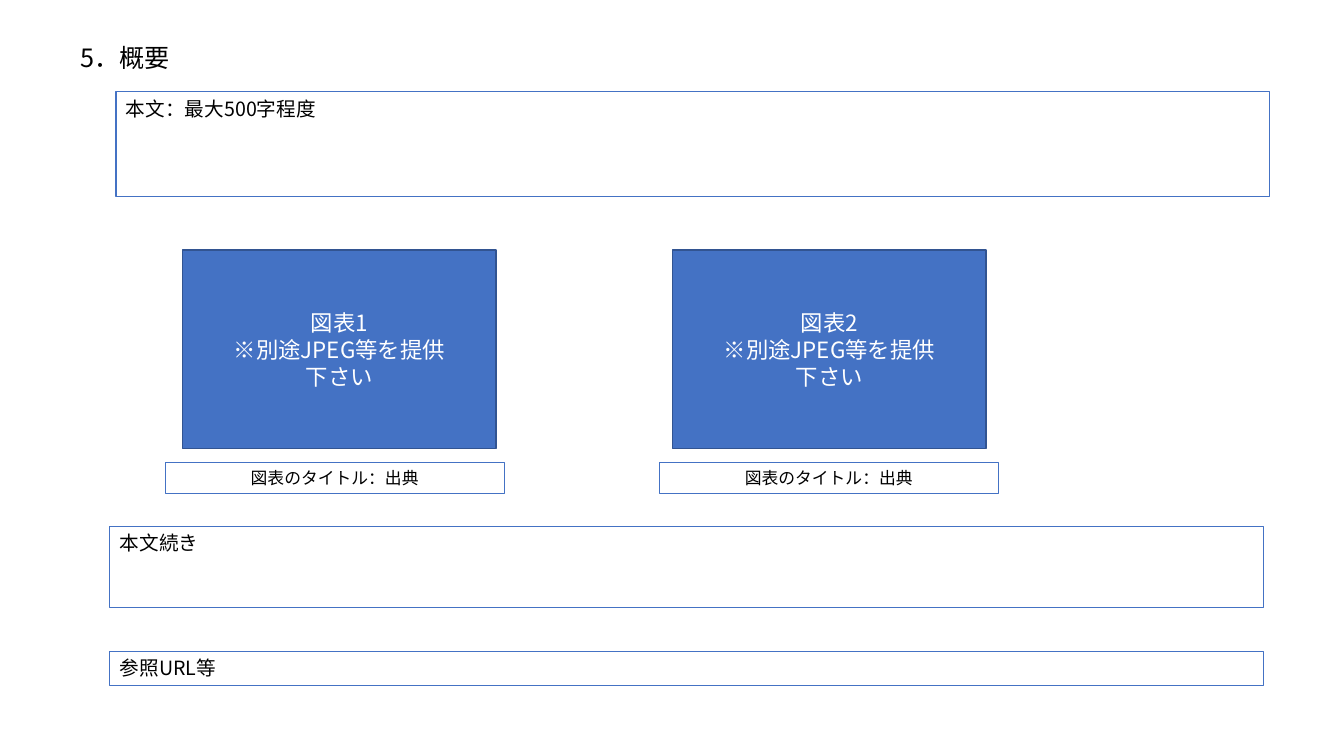
from lxml import etree
from pptx import Presentation
from pptx import util as u
from pptx.dml.color import RGBColor
from pptx.enum import shapes, text
from pptx.oxml.ns import qn

FONT = "Noto Sans CJK JP"
BLACK = RGBColor(0x00, 0x00, 0x00)
WHITE = RGBColor(0xFF, 0xFF, 0xFF)
BLUE = RGBColor(0x44, 0x72, 0xC4)
DARK_BLUE = RGBColor(0x32, 0x54, 0x91)

SLIDE_WIDTH = u.Inches(13.33)
SLIDE_HEIGHT = u.Inches(7.5)

# Lengths are percentages of the slide's width and height.
BODY_WIDTH = 85.82
FIGURE_LEFT, FIGURE_PITCH = 13.58, 36.46
CAPTION_LEFT, CAPTION_PITCH = 12.3, 36.76


def place(left, top, width, height):
    """Turn percentages of the slide into lengths."""
    return (int(SLIDE_WIDTH * left / 100), int(SLIDE_HEIGHT * top / 100),
            int(SLIDE_WIDTH * width / 100), int(SLIDE_HEIGHT * height / 100))


def write(shape, lines, size, color=BLACK, align=text.PP_ALIGN.LEFT,
          anchor=text.MSO_ANCHOR.TOP):
    frame = shape.text_frame
    frame.word_wrap = True
    frame.vertical_anchor = anchor
    frame.text = "\n".join(lines)
    for paragraph in frame.paragraphs:
        paragraph.alignment = align
        font = paragraph.font
        font.size = u.Pt(size)
        font.name = FONT
        font.color.rgb = color
        properties = paragraph._p.pPr.find(qn("a:defRPr"))
        east_asian = etree.SubElement(properties, qn("a:ea"))
        east_asian.set("typeface", FONT)


def add_title(slide, title, box):
    write(slide.shapes.add_textbox(*place(*box)), [title], 18)


def add_rectangle(slide, box, line_color, line_width):
    shape = slide.shapes.add_shape(shapes.MSO_SHAPE.RECTANGLE, *place(*box))
    shape.shadow.inherit = False
    shape.fill.background()
    shape.line.color.rgb = line_color
    shape.line.width = u.Pt(line_width)
    return shape


def add_text_frame(slide, line, box, size=14, align=text.PP_ALIGN.LEFT):
    write(add_rectangle(slide, box, BLUE, 0.75), [line], size, align=align)


def add_figure(slide, index):
    """Add a figure's blue area and the caption below it."""
    area = add_rectangle(
        slide, (FIGURE_LEFT + index * FIGURE_PITCH, 33.07, 23.33, 26.27),
        DARK_BLUE, 1)
    area.fill.solid()
    area.fill.fore_color.rgb = BLUE
    write(area, [f"図表{index + 1}", "※別途JPEG等を提供", "下さい"], 16, WHITE,
          text.PP_ALIGN.CENTER, text.MSO_ANCHOR.MIDDLE)
    add_text_frame(
        slide, "図表のタイトル：出典",
        (CAPTION_LEFT + index * CAPTION_PITCH, 61.2, 25.21, 4.1),
        12, text.PP_ALIGN.CENTER)


def main():
    presentation = Presentation()
    presentation.slide_width = SLIDE_WIDTH
    presentation.slide_height = SLIDE_HEIGHT
    slide = presentation.slides.add_slide(presentation.slide_layouts[6])

    add_title(slide, "5．概要", (5.25, 4.93, 48.39, 5.33))
    add_text_frame(slide, "本文：最大500字程度", (8.63, 12.13, BODY_WIDTH, 13.87))
    for index in range(2):
        add_figure(slide, index)
    add_text_frame(slide, "本文続き", (8.18, 69.6, BODY_WIDTH, 10.8))
    add_text_frame(slide, "参照URL等", (8.18, 86.13, BODY_WIDTH, 4.53))

    presentation.save("out.pptx")


if __name__ == "__main__":
    main()
